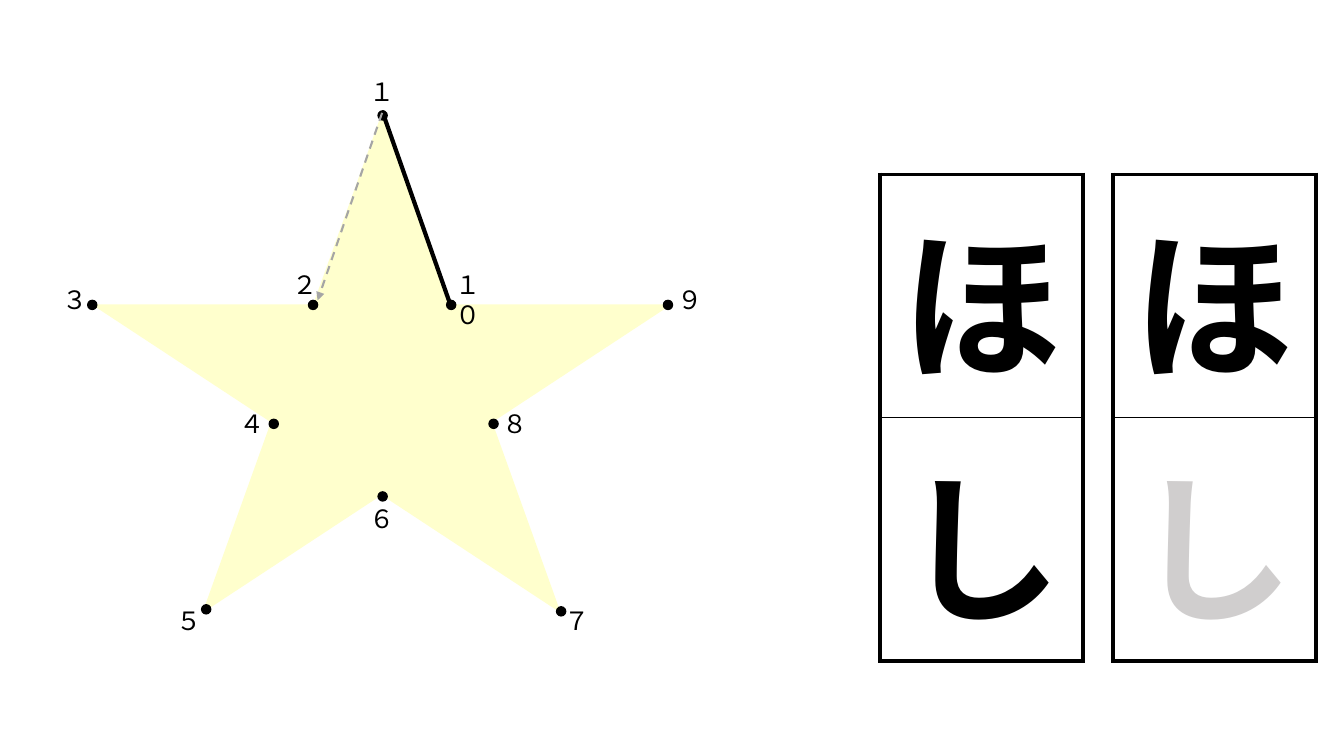
from pptx import Presentation
from pptx.dml.color import RGBColor
from pptx.enum.dml import MSO_LINE
from pptx.enum.shapes import MSO_CONNECTOR, MSO_SHAPE
from pptx.enum.text import MSO_ANCHOR, MSO_AUTO_SIZE, PP_ALIGN
from pptx.oxml.ns import qn
from pptx.util import Emu, Pt
from lxml.etree import SubElement

BLACK = RGBColor(0, 0, 0)
GRAY = RGBColor(0xA5, 0xA5, 0xA5)
PALE = RGBColor(0xD0, 0xCE, 0xCE)
CREAM = RGBColor(0xFF, 0xFF, 0xCD)
FONT = "Noto Sans CJK JP"
DOT = 9

DOTS = [
    ("１", (284, -3), (266, -42), 43),
    ("２", (215, 185), (189, 149), 43),
    ("３", (-4, 185), (-39, 164), 43),
    ("４", (176, 303), (137, 287), 43),
    ("５", (109, 487), (74, 483), 43),
    ("６", (284, 375), (266, 381), 43),
    ("７", (461, 489), (459, 483), 43),
    ("８", (394, 303), (398, 287), 43),
    ("９", (567, 185), (571, 164), 43),
    ("１０", (352, 185), (343, 149), 60),
]


def px(*sizes):
    return [Emu(size * 9144) for size in sizes]


def put_text(frame, text, size=18, color=BLACK, bold=False):
    para = frame.paragraphs[0]
    para.alignment = PP_ALIGN.CENTER
    run = para.add_run()
    run.text = text
    font = run.font
    font.name, font.size, font.bold = FONT, Pt(size), bold
    font.color.rgb = color
    SubElement(font._element, qn("a:ea"), typeface=FONT)


def add_form(slide, kind, box, fill, edge=None):
    form = slide.shapes.add_shape(kind, *px(*box))
    form.shadow.inherit = False
    form.fill.solid()
    form.fill.fore_color.rgb = fill
    if edge:
        form.line.color.rgb = edge
        form.line.width = Pt(1)
    else:
        form.line.fill.background()


def add_label(slide, text, box):
    label = slide.shapes.add_textbox(*px(*box)).text_frame
    label.word_wrap = True
    label.auto_size = MSO_AUTO_SIZE.SHAPE_TO_FIT_TEXT
    put_text(label, text)


def add_line(slide, start, end, color, width, arrow=False):
    line = slide.shapes.add_connector(MSO_CONNECTOR.STRAIGHT, *px(*start, *end))
    line.line.color.rgb = color
    line.line.width = Pt(width)
    if arrow:
        line.line.dash_style = MSO_LINE.DASH
        SubElement(line.line._get_or_add_ln(), qn("a:tailEnd"), type="triangle")
    SubElement(line._element.spPr, qn("a:effectLst"))


def draw_star(slide, box):
    left, top = box[:2]

    def shift(spot):
        return left + spot[0], top + spot[1]

    add_form(slide, MSO_SHAPE.STAR_5_POINT, box, CREAM)
    for digit, dot, label, width in DOTS:
        add_form(slide, MSO_SHAPE.OVAL, (*shift(dot), DOT, DOT), BLACK, BLACK)
        add_label(slide, digit, (*shift(label), width, 40))
    add_line(slide, shift((288, -3)), shift((357, 193)), BLACK, 3)
    add_line(slide, shift((288, -1)), shift((224, 185)), GRAY, 1.5, arrow=True)


def set_edge(cell, side, width):
    edge = SubElement(cell._tc.get_or_add_tcPr(), qn(f"a:ln{side}"), w=str(Pt(width)))
    fill = SubElement(edge, qn("a:solidFill"))
    SubElement(fill, qn("a:srgbClr"), val=str(BLACK))


def draw_word(slide, box, word):
    table = slide.shapes.add_table(len(word), 1, *px(*box)).table
    table.first_row = table.horz_banding = False
    last = len(word) - 1
    for i, (kana, color) in enumerate(word):
        table.rows[i].height = px(197)[0]
        cell = table.cell(i, 0)
        cell.vertical_anchor = MSO_ANCHOR.MIDDLE
        put_text(cell.text_frame, kana, size=115, color=color, bold=True)
        for side, width in (("L", 3), ("R", 3), ("T", 1 if i else 3),
                            ("B", 3 if i == last else 1)):
            set_edge(cell, side, width)
        cell.fill.background()


def main():
    deck = Presentation()
    deck.slide_width, deck.slide_height = px(1333, 750)
    slide = deck.slides.add_slide(deck.slide_layouts[6])
    for left, color in ((1104, PALE), (873, BLACK)):
        draw_word(slide, (left, 173, 201, 403), [("ほ", BLACK), ("し", color)])
    draw_star(slide, (91, 113, 575, 495))
    deck.save("out.pptx")


if __name__ == "__main__":
    main()
